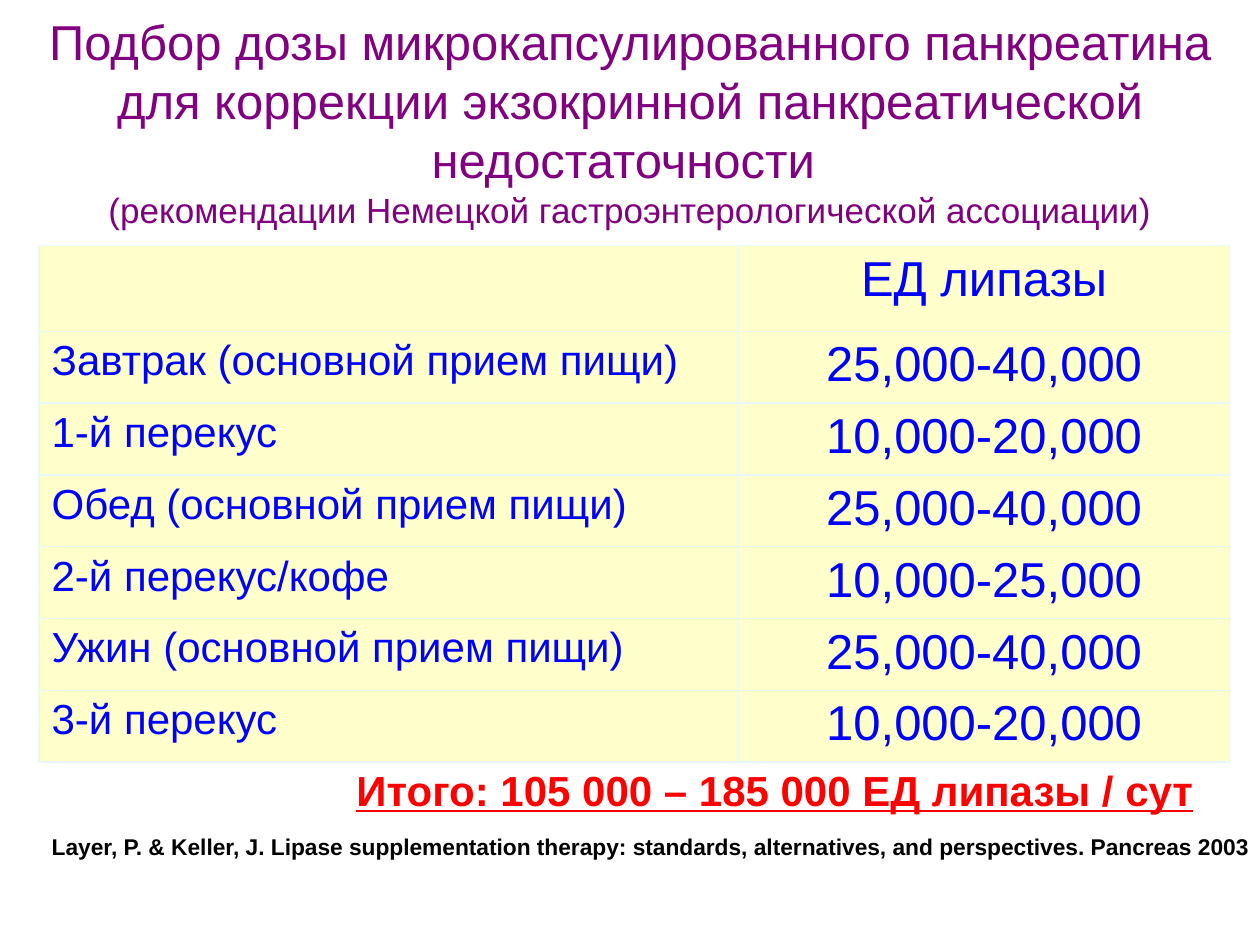
"""Build the slide on choosing a pancreatin dose."""
from typing import NamedTuple

from lxml import etree
from pptx import Presentation
from pptx.dml.color import RGBColor
from pptx.enum.text import MSO_ANCHOR, MSO_AUTO_SIZE, PP_ALIGN
from pptx.oxml.ns import qn
from pptx.util import Inches, Pt

LEFT, CENTER, RIGHT = PP_ALIGN.LEFT, PP_ALIGN.CENTER, PP_ALIGN.RIGHT
TOP, MIDDLE = MSO_ANCHOR.TOP, MSO_ANCHOR.MIDDLE
NO_FIT, GROW = MSO_AUTO_SIZE.NONE, MSO_AUTO_SIZE.SHAPE_TO_FIT_TEXT

PURPLE = RGBColor(0x80, 0x00, 0x80)
BLUE = RGBColor(0x00, 0x00, 0xFF)
RED = RGBColor(0xFF, 0x00, 0x00)
BLACK = RGBColor(0x00, 0x00, 0x00)
CREAM = RGBColor(0xFF, 0xFF, 0xCC)
PALE_BLUE = RGBColor(0xE8, 0xF9, 0xFC)

FONT = "Arial"
SLIDE_W, SLIDE_H = Inches(10), Inches(7.5)
LABEL_W, DOSE_W = Inches(5.55), Inches(3.9)
HEADER_H, ROW_H = Inches(0.68), Inches(0.57)
HANGING = Inches(0.38)
BORDER_SIDES = ("a:lnL", "a:lnR", "a:lnT", "a:lnB")


class Meal(NamedTuple):
    """One table row: a meal and its lipase dose."""
    label: str
    dose: str


class Note(NamedTuple):
    """A right-aligned line of text placed by inches on the slide."""
    text: str
    left: float
    top: float
    width: float
    height: float
    size: float
    color: RGBColor
    underline: bool
    anchor: MSO_ANCHOR


TITLE = "Подбор дозы микрокапсулированного панкреатина для коррекции экзокринной панкреатической недостаточности "
SUBTITLE = "(рекомендации Немецкой гастроэнтерологической ассоциации)"
MEALS = (
    Meal("", "ЕД липазы"),
    Meal("Завтрак (основной прием пищи)", "25,000-40,000"),
    Meal("1-й перекус", "10,000-20,000"),
    Meal("Обед (основной прием пищи)", "25,000-40,000"),
    Meal("2-й перекус/кофе", "10,000-25,000"),
    Meal("Ужин (основной прием пищи)", "25,000-40,000"),
    Meal("3-й перекус", "10,000-20,000"),
)
NOTES = (
    Note("Итого: 105 000 – 185 000 ЕД липазы / сут",
         1.8, 6.02, 7.77, 0.51, 24, RED, True, TOP),
    Note("Layer, P. & Keller, J. Lipase supplementation therapy: standards, "
         "alternatives, and perspectives. Pancreas 2003",
         0, 6.56, 10, 0.32, 13, BLACK, False, MIDDLE),
)


def style(font, size: float, color: RGBColor) -> None:
    """Set the typeface, size and colour of a font."""
    font.name, font.size = FONT, Pt(size)
    font.color.rgb = color


def fill_title(s) -> None:
    """Place the title and its smaller second part."""
    sp = s.shapes.title
    sp.left, sp.top = 0, Inches(0.04)
    sp.width, sp.height = SLIDE_W, Inches(1.84)
    tf = sp.text_frame
    tf.word_wrap, tf.auto_size, tf.vertical_anchor = True, NO_FIT, MIDDLE
    p = tf.paragraphs[0]
    p.alignment = CENTER
    for text, size in ((TITLE, 28), (SUBTITLE, 20)):
        if p.runs:
            p.add_line_break()
        r = p.add_run()
        r.text = text
        style(r.font, size, PURPLE)


def add_borders(cell) -> None:
    """Draw a thin pale line on every side of a cell."""
    tc_pr = cell._tc.get_or_add_tcPr()
    for i, side in enumerate(BORDER_SIDES):
        ln = etree.Element(qn(side), w=str(Pt(1)))
        fill = etree.SubElement(ln, qn("a:solidFill"))
        etree.SubElement(fill, qn("a:srgbClr"), val=str(PALE_BLUE))
        tc_pr.insert(i, ln)


def fill_cell(cell, text: str, size: float, align: PP_ALIGN) -> None:
    """Write and format one table cell."""
    cell.fill.solid()
    cell.fill.fore_color.rgb = CREAM
    add_borders(cell)
    p = cell.text_frame.paragraphs[0]
    p.text, p.alignment = text, align
    style(p.font, size, BLUE)
    p_pr = p._p.get_or_add_pPr()
    p_pr.set("marL", str(HANGING))
    p_pr.set("indent", str(-HANGING))


def add_dose_table(s) -> None:
    """Add the table of meals and doses."""
    height = HEADER_H + ROW_H * (len(MEALS) - 1)
    table = s.shapes.add_table(len(MEALS), 2, Inches(0.31), Inches(1.95),
                               LABEL_W + DOSE_W, height).table
    table.columns[0].width, table.columns[1].width = LABEL_W, DOSE_W
    for i, meal in enumerate(MEALS):
        table.rows[i].height = ROW_H if i else HEADER_H
        fill_cell(table.cell(i, 0), meal.label, 24, LEFT)
        fill_cell(table.cell(i, 1), meal.dose, 28, CENTER)


def add_note(s, note: Note) -> None:
    """Add a bold right-aligned line of text."""
    box = (Inches(v) for v in (note.left, note.top, note.width, note.height))
    tf = s.shapes.add_textbox(*box).text_frame
    tf.word_wrap, tf.auto_size, tf.vertical_anchor = True, GROW, note.anchor
    p = tf.paragraphs[0]
    p.text, p.alignment = note.text, RIGHT
    style(p.font, note.size, note.color)
    p.font.bold, p.font.underline = True, note.underline


def main() -> None:
    """Build and save the presentation."""
    prs = Presentation()
    prs.slide_width, prs.slide_height = SLIDE_W, SLIDE_H
    s = prs.slides.add_slide(prs.slide_layouts[5])
    fill_title(s)
    add_dose_table(s)
    for note in NOTES:
        add_note(s, note)
    prs.save("out.pptx")


if __name__ == "__main__":
    main()
